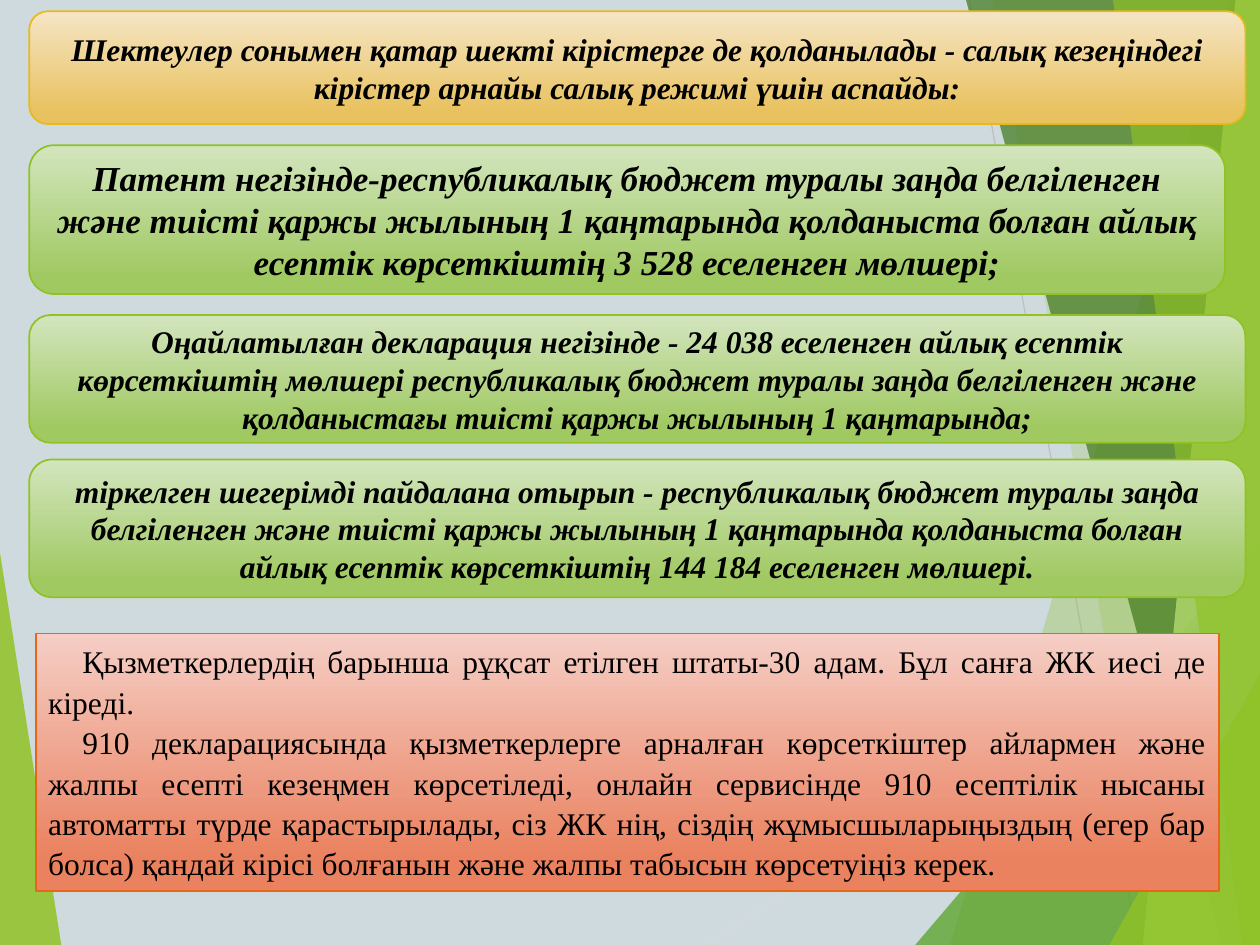
from lxml import etree
from pptx import Presentation
from pptx.dml.color import RGBColor
from pptx.enum.shapes import MSO_CONNECTOR, MSO_SHAPE
from pptx.enum.text import MSO_ANCHOR, MSO_AUTO_SIZE, PP_ALIGN
from pptx.oxml.ns import qn
from pptx.util import Pt

ROUNDED, RECTANGLE = MSO_SHAPE.ROUNDED_RECTANGLE, MSO_SHAPE.RECTANGLE
WIDTH, HEIGHT = 720, 540
FONT = "Times New Roman"
COLORS = {
    "background": "CFDADF", "text": "000000",
    "lime": "90C226", "leaf": "54A021", "forest": "3F7819", "pale": "C0E474",
    "light_gray": "D9D9D9", "gray": "BFBFBF",
}
# Gradient top, gradient bottom, outline
THEMES = {
    "gold": ("F5E5C5", "E9C260", "E6B91E"),
    "green": ("D3E5BE", "A0C962", "90C226"),
    "red": ("F5CEC5", "EA815F", "E76618"),
}
BOTTOM_RIGHT, TOP_RIGHT = (WIDTH, HEIGHT), (WIDTH, 0)

LEFT_FACET = ("lime", 85, [(0, 316), (35, HEIGHT), (0, HEIGHT)])
RAYS = [  # color, start, end
    ("light_gray", (404, HEIGHT), (WIDTH, 329)),
    ("gray", (554, 0), (650, HEIGHT)),
]
RIGHT_FACETS = [  # color, opacity in percent, outline
    ("lime", 30, [(702, 0), (543, HEIGHT), BOTTOM_RIGHT, TOP_RIGHT]),
    ("lime", 20, [(567, 0), (662, HEIGHT), BOTTOM_RIGHT, TOP_RIGHT]),
    ("leaf", 72, [(523, HEIGHT), (WIDTH, 309), BOTTOM_RIGHT]),
    ("forest", 70, [(552, 0), (698, HEIGHT), BOTTOM_RIGHT, TOP_RIGHT]),
    ("pale", 70, [(706, 0), (653, HEIGHT), BOTTOM_RIGHT, TOP_RIGHT]),
    ("lime", 65, [(636, 0), (710, HEIGHT), BOTTOM_RIGHT, TOP_RIGHT]),
    ("lime", 80, [(634, HEIGHT), (WIDTH, 385), BOTTOM_RIGHT]),
]

LIMIT_LEFT = 16.7
LIMITS = [  # theme, top, width, height, text size, text
    ("gold", 6.4, 695, 64.5, 18,
     "Шектеулер сонымен қатар шекті кірістерге де қолданылады - салық кезеңіндегі "
     "кірістер арнайы салық режимі үшін аспайды:"),
    ("green", 83, 683.3, 85, 20,
     "Патент негізінде-республикалық бюджет туралы заңда белгіленген және тиісті қаржы "
     "жылының 1 қаңтарында қолданыста болған айлық есептік көрсеткіштің 3 528 еселенген мөлшері;"),
    ("green", 180, 695, 73, 18,
     "Оңайлатылған декларация негізінде - 24 038 еселенген айлық есептік көрсеткіштің мөлшері "
     "республикалық бюджет туралы заңда белгіленген және қолданыстағы тиісті қаржы жылының "
     "1 қаңтарында;"),
    ("green", 262.6, 695, 78.7, 18,
     "тіркелген шегерімді пайдалана отырып - республикалық бюджет туралы заңда белгіленген және "
     "тиісті қаржы жылының 1 қаңтарында қолданыста болған айлық есептік көрсеткіштің "
     "144 184 еселенген мөлшері."),
]
STAFF_BOX = (20.5, 362, 676, 147.3)
STAFF_NOTES = [
    "Қызметкерлердің барынша рұқсат етілген штаты-30 адам. Бұл санға ЖК иесі де кіреді.",
    "910 декларациясында қызметкерлерге арналған көрсеткіштер айлармен және жалпы есепті "
    "кезеңмен көрсетіледі, онлайн сервисінде 910 есептілік нысаны автоматты түрде "
    "қарастырылады, сіз ЖК нің, сіздің жұмысшыларыңыздың (егер бар болса) қандай кірісі "
    "болғанын және жалпы табысын көрсетуіңіз керек.",
]


def color(name):
    return RGBColor.from_string(COLORS[name])


def set_attributes(target, values):
    for name, value in values.items():
        setattr(target, name, value)


def add_facet(page, name, opacity, points):
    builder = page.shapes.build_freeform(*points[0], scale=Pt(1))
    builder.add_line_segments(points[1:], close=True)
    facet = builder.convert_to_shape()
    facet.shadow.inherit = False
    facet.fill.solid()
    facet.fill.fore_color.rgb = color(name)
    facet.line.fill.background()
    fill_color = facet.element.spPr.find(qn("a:solidFill"))[0]
    etree.SubElement(fill_color, qn("a:alpha"), val=str(opacity * 1000))


def add_ray(page, name, start, end):
    ray = page.shapes.add_connector(
        MSO_CONNECTOR.STRAIGHT, *(Pt(value) for value in start + end))
    ray.line.color.rgb = color(name)
    ray.line.width = Pt(0.75)
    etree.SubElement(ray.element.spPr, qn("a:effectLst"))


def add_box(page, kind, theme, bounds, texts, frame_format, para_format, font_format):
    box = page.shapes.add_shape(kind, *(Pt(value) for value in bounds))
    box.shadow.inherit = False
    top, bottom, outline = THEMES[theme]
    box.fill.gradient()
    box.fill.gradient_angle = 270
    for stop, place, shade in zip(box.fill.gradient_stops, (0, 0.88), (top, bottom)):
        stop.position = place
        stop.color.rgb = RGBColor.from_string(shade)
    box.line.color.rgb = RGBColor.from_string(outline)
    box.line.width = Pt(1)
    frame = box.text_frame
    set_attributes(frame, {"word_wrap": True, **frame_format})
    for index, text in enumerate(texts):
        para = frame.add_paragraph() if index else frame.paragraphs[0]
        set_attributes(para, para_format)
        span = para.add_run()
        span.text = text
        set_attributes(span.font, {"name": FONT, **font_format})
        span.font.color.rgb = color("text")
    return box


def main():
    deck = Presentation()
    deck.slide_width, deck.slide_height = Pt(WIDTH), Pt(HEIGHT)
    page = deck.slides.add_slide(deck.slide_layouts[6])
    page.background.fill.solid()
    page.background.fill.fore_color.rgb = color("background")

    add_facet(page, *LEFT_FACET)
    for ray in RAYS:
        add_ray(page, *ray)
    for facet in RIGHT_FACETS:
        add_facet(page, *facet)

    for theme, top, width, height, size, text in LIMITS:
        add_box(page, ROUNDED, theme, (LIMIT_LEFT, top, width, height), [text],
                {"vertical_anchor": MSO_ANCHOR.MIDDLE},
                {"alignment": PP_ALIGN.CENTER},
                {"size": Pt(size), "bold": True, "italic": True})

    staff = add_box(page, RECTANGLE, "red", STAFF_BOX, STAFF_NOTES,
                    {"vertical_anchor": MSO_ANCHOR.TOP,
                     "auto_size": MSO_AUTO_SIZE.SHAPE_TO_FIT_TEXT},
                    {"alignment": PP_ALIGN.JUSTIFY, "line_spacing": 1.07},
                    {"size": Pt(18)})
    for para in staff.text_frame.paragraphs:
        para._p.get_or_add_pPr().set("indent", str(Pt(19.5)))

    deck.save("out.pptx")


if __name__ == "__main__":
    main()
